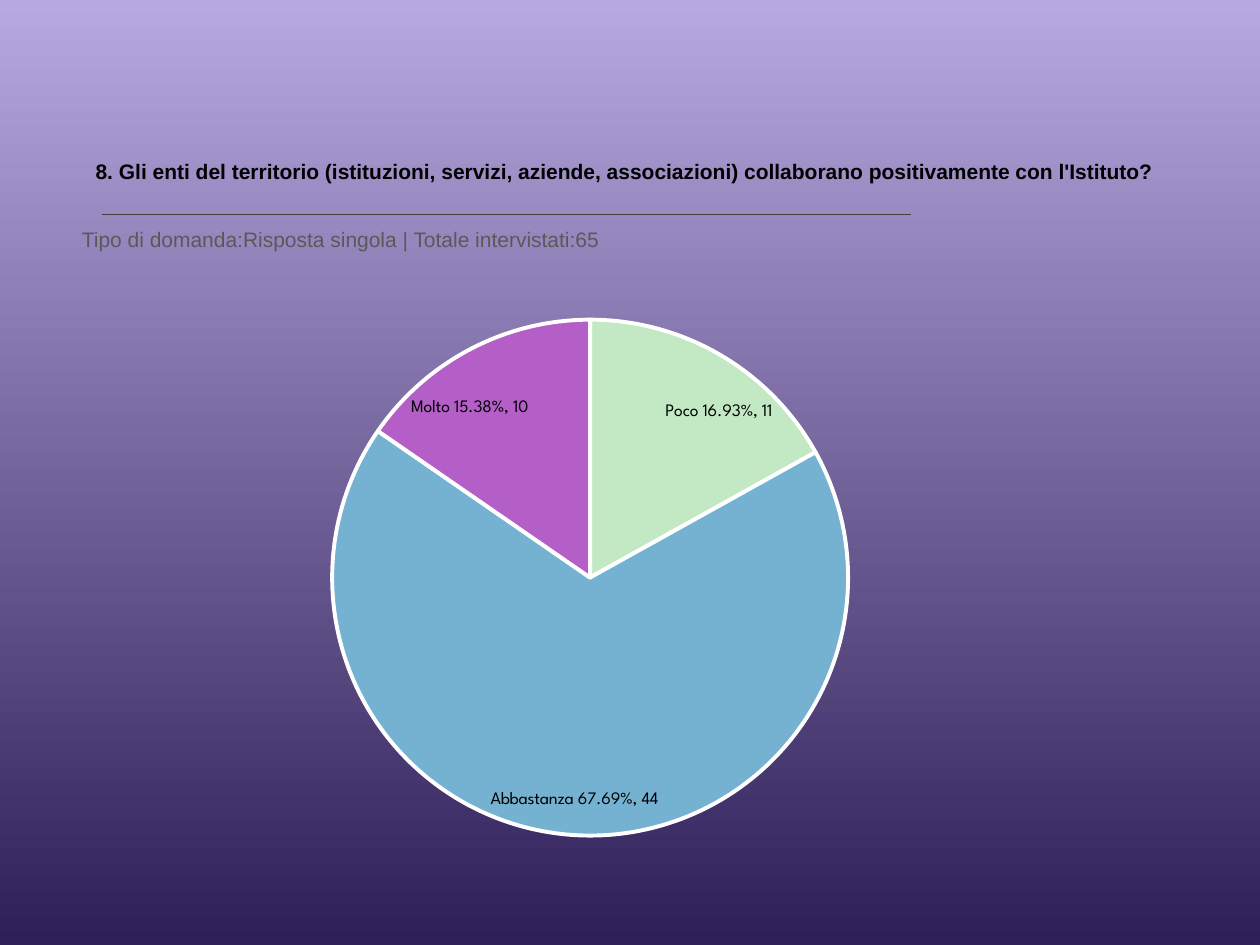
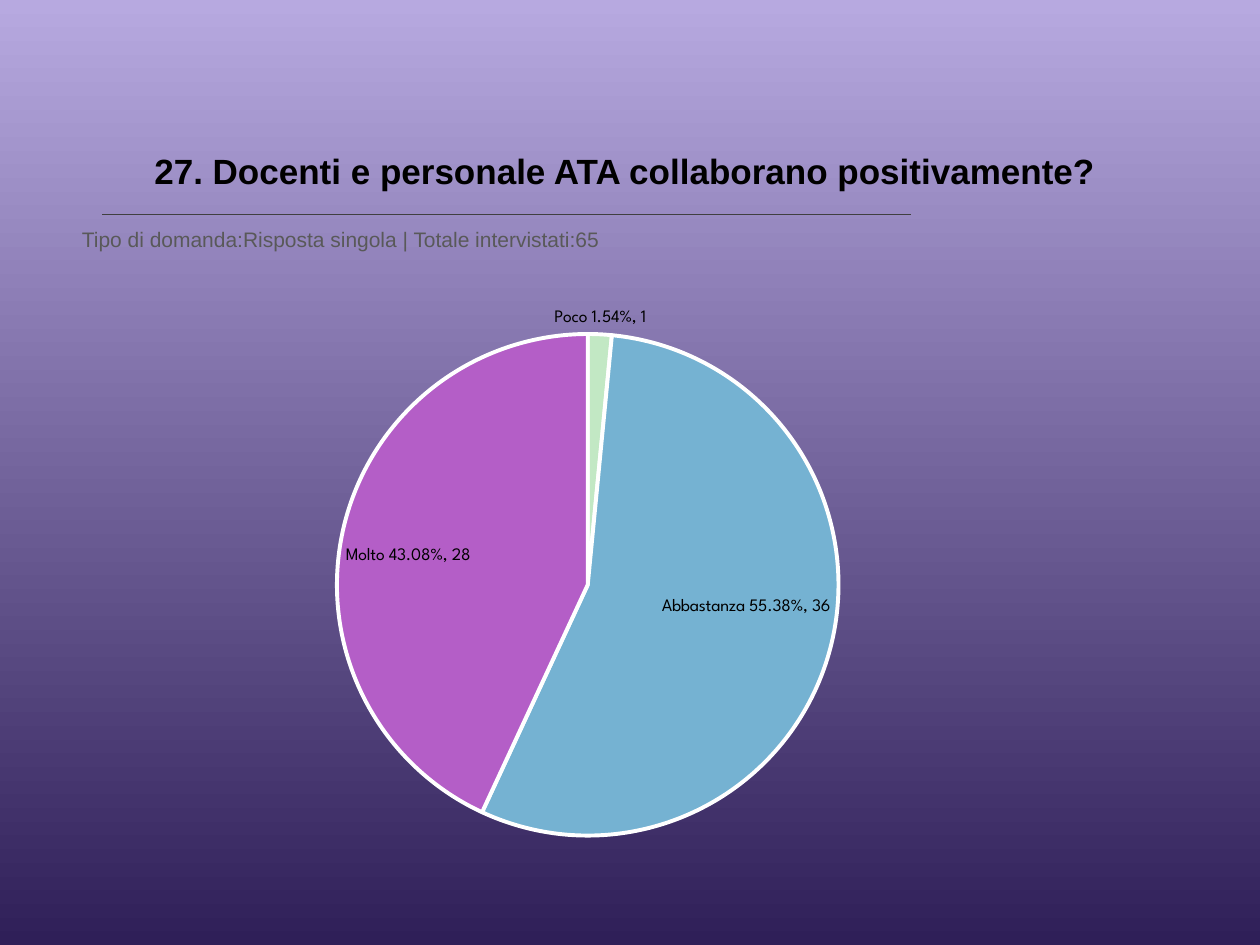
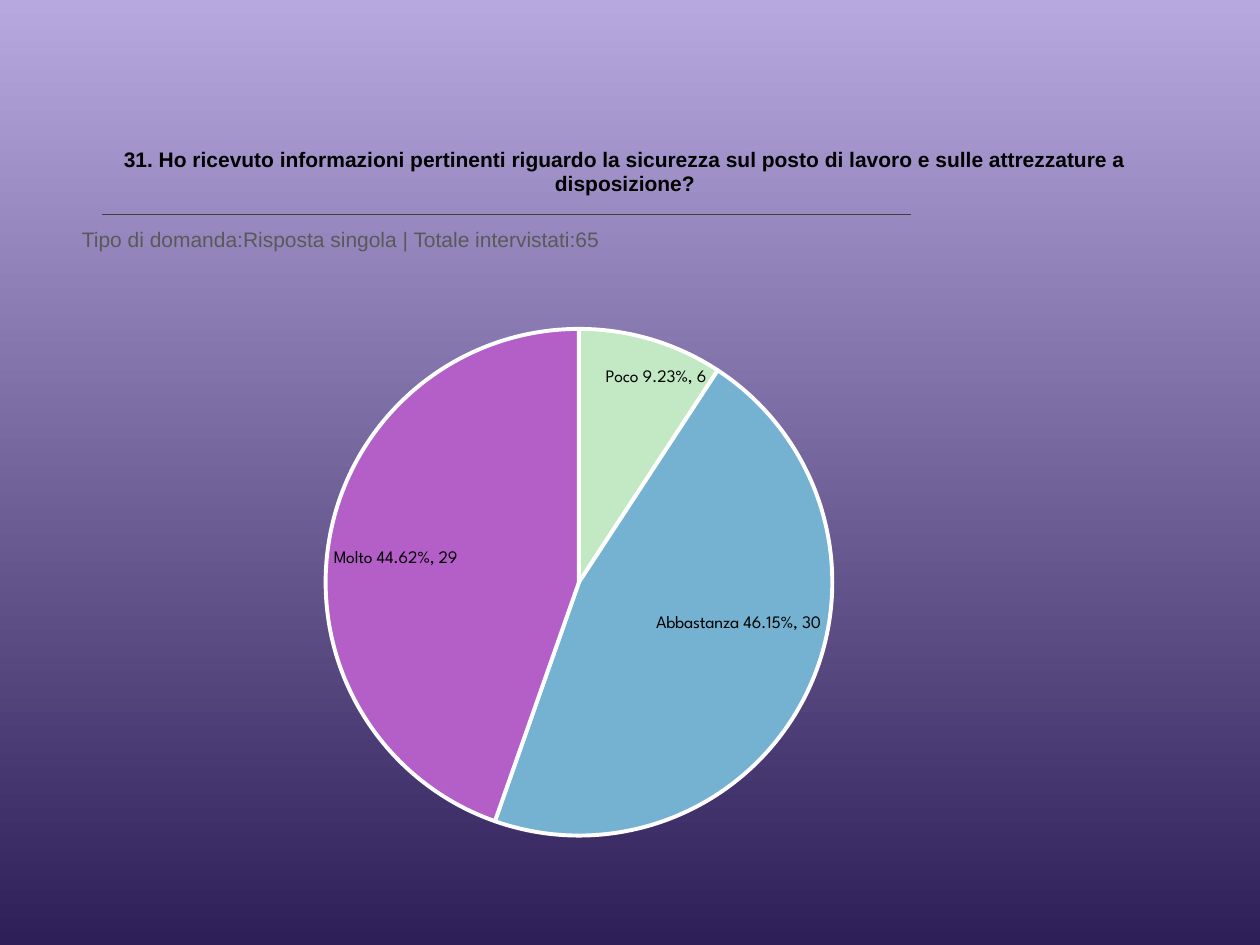
from lxml.etree import SubElement
from pptx import Presentation
from pptx.chart.data import CategoryChartData
from pptx.dml.color import RGBColor
from pptx.enum.chart import XL_CHART_TYPE, XL_LABEL_POSITION
from pptx.enum.shapes import MSO_CONNECTOR
from pptx.enum.text import MSO_ANCHOR, MSO_AUTO_SIZE, PP_ALIGN
from pptx.oxml.ns import qn
from pptx.util import Inches, Pt

LILAC = RGBColor(0xB7, 0xA9, 0xE0)
INDIGO = RGBColor(0x2F, 0x1F, 0x58)
BLACK = RGBColor(0, 0, 0)
WHITE = RGBColor(0xFF, 0xFF, 0xFF)
RULE_GREY = RGBColor(0x40, 0x40, 0x40)
TEXT_GREY = RGBColor(0x59, 0x59, 0x59)
ANSWER_COLORS = {
    "Per niente": RGBColor(0xBA, 0xCA, 0xD4),
    "Poco": RGBColor(0xC2, 0xE8, 0xC4),
    "Abbastanza": RGBColor(0x75, 0xB2, 0xD2),
    "Molto": RGBColor(0xB4, 0x5E, 0xC7),
}
TEXT_FONT = "Arial"
CHART_FONT = "League Spartan"
PERCENT = "0.##%"

# Boxes: left, top, width, height
TITLE_BOX = [Inches(v) for v in (0.5, 1.08, 9, 0.58)]
DETAIL_BOX = [Inches(v) for v in (0.5, 1.75, 9, 0.42)]
CHART_BOX = [Inches(v) for v in (1.33, 2.33, 6.67, 4.44)]
RULE_ENDS = [Inches(v) for v in (0.81, 1.7, 7.23, 1.7)]

DETAIL = "Tipo di domanda:Risposta singola | Totale intervistati:65"

# Title, title size, then share, shown percentage and count for each answer
QUESTIONS = [
    ("8. Gli enti del territorio (istituzioni, servizi, aziende, associazioni) "
     "collaborano positivamente con l'Istituto?", 12,
     [(0, "0%", 0), (0.1692, "16.93%", 11),
      (0.6769, "67.69%", 44), (0.1538, "15.38%", 10)]),
    ("27. Docenti e personale ATA collaborano positivamente?", 20,
     [(0, "0%", 0), (0.0154, "1.54%", 1),
      (0.5538, "55.38%", 36), (0.4308, "43.08%", 28)]),
    ("31. Ho ricevuto informazioni pertinenti riguardo la sicurezza sul posto "
     "di lavoro e sulle attrezzature a disposizione?", 12,
     [(0, "0%", 0), (0.0923, "9.23%", 6),
      (0.4615, "46.15%", 30), (0.4462, "44.62%", 29)]),
]


def set_background(master):
    fill = master.background.fill
    fill.gradient()
    fill.gradient_angle = 270
    for stop, color in zip(fill.gradient_stops, (LILAC, INDIGO)):
        stop.color.rgb = color
    for stop, position in zip(fill.gradient_stops, (0, 1)):
        stop.position = position


def add_rule(s, layout):
    """Draw the rule under the title and move it to the shared layout."""
    rule = s.shapes.add_connector(MSO_CONNECTOR.STRAIGHT, *RULE_ENDS)
    rule.line.color.rgb = RULE_GREY
    rule.line.width = Pt(0.75)
    SubElement(rule.element.spPr, qn("a:effectLst"))
    layout.shapes.element.append(rule.element)


def place(sp, box):
    sp.left, sp.top, sp.width, sp.height = box


def add_run(p, text, font, size, color, bold=False):
    r = p.add_run()
    r.text = text
    r.font.name = font
    r.font.size = Pt(size)
    r.font.bold = bold
    r.font.color.rgb = color


def set_title(s, box, text, size):
    sp = s.shapes.title
    place(sp, box)
    tf = sp.text_frame
    tf.auto_size = MSO_AUTO_SIZE.NONE
    tf.vertical_anchor = MSO_ANCHOR.MIDDLE
    tf.margin_right = Inches(0.18)
    p = tf.paragraphs[0]
    p.alignment = PP_ALIGN.CENTER
    p.line_spacing = 0.95
    add_run(p, text, TEXT_FONT, size, BLACK, bold=True)


def add_detail(s, box):
    tf = s.shapes.add_textbox(*box).text_frame
    tf.word_wrap = True
    tf.margin_left = Inches(0.15)
    add_run(tf.paragraphs[0], DETAIL, TEXT_FONT, 12, TEXT_GREY)


def add_answer_pie(s, box, answers):
    data = CategoryChartData(number_format=PERCENT)
    data.categories = list(ANSWER_COLORS)
    data.add_series("Series 1", [share for share, _, _ in answers])
    chart = s.shapes.add_chart(XL_CHART_TYPE.PIE, *box, data).chart
    chart.has_title = False
    chart.has_legend = False
    chart.font.name = CHART_FONT
    chart.font.size = Pt(18)
    chart.font.color.rgb = BLACK

    plot = chart.plots[0]
    plot.vary_by_categories = True
    series = plot.series[0]
    series.format.line.color.rgb = WHITE
    series.format.line.width = Pt(2.25)
    labels = series.data_labels
    labels.number_format = PERCENT
    labels.number_format_is_linked = False
    labels.show_value = True
    labels.show_category_name = True
    labels.position = XL_LABEL_POSITION.BEST_FIT
    labels.font.size = Pt(10)

    for i, ((name, color), (_, percent, count)) in enumerate(
            zip(ANSWER_COLORS.items(), answers)):
        point = series.points[i]
        point.format.fill.solid()
        point.format.fill.fore_color.rgb = color
        point.format.line.color.rgb = WHITE
        point.format.line.width = Pt(2.25)
        label = point.data_label
        add_run(label.text_frame.paragraphs[0], f"{name} {percent}, {count}",
                CHART_FONT, 10, BLACK)
        label.position = XL_LABEL_POSITION.BEST_FIT


def add_question_slide(prs, layout, title, size, answers):
    s = prs.slides.add_slide(layout)
    set_title(s, TITLE_BOX, title, size)
    add_detail(s, DETAIL_BOX)
    add_answer_pie(s, CHART_BOX, answers)
    return s


def main():
    prs = Presentation()
    prs.slide_width, prs.slide_height = Inches(10), Inches(7.5)
    set_background(prs.slide_master)
    layout = prs.slide_layouts.get_by_name("Title Only")
    slides = [add_question_slide(prs, layout, *question)
              for question in QUESTIONS]
    add_rule(slides[0], layout)
    prs.save("out.pptx")


if __name__ == "__main__":
    main()
